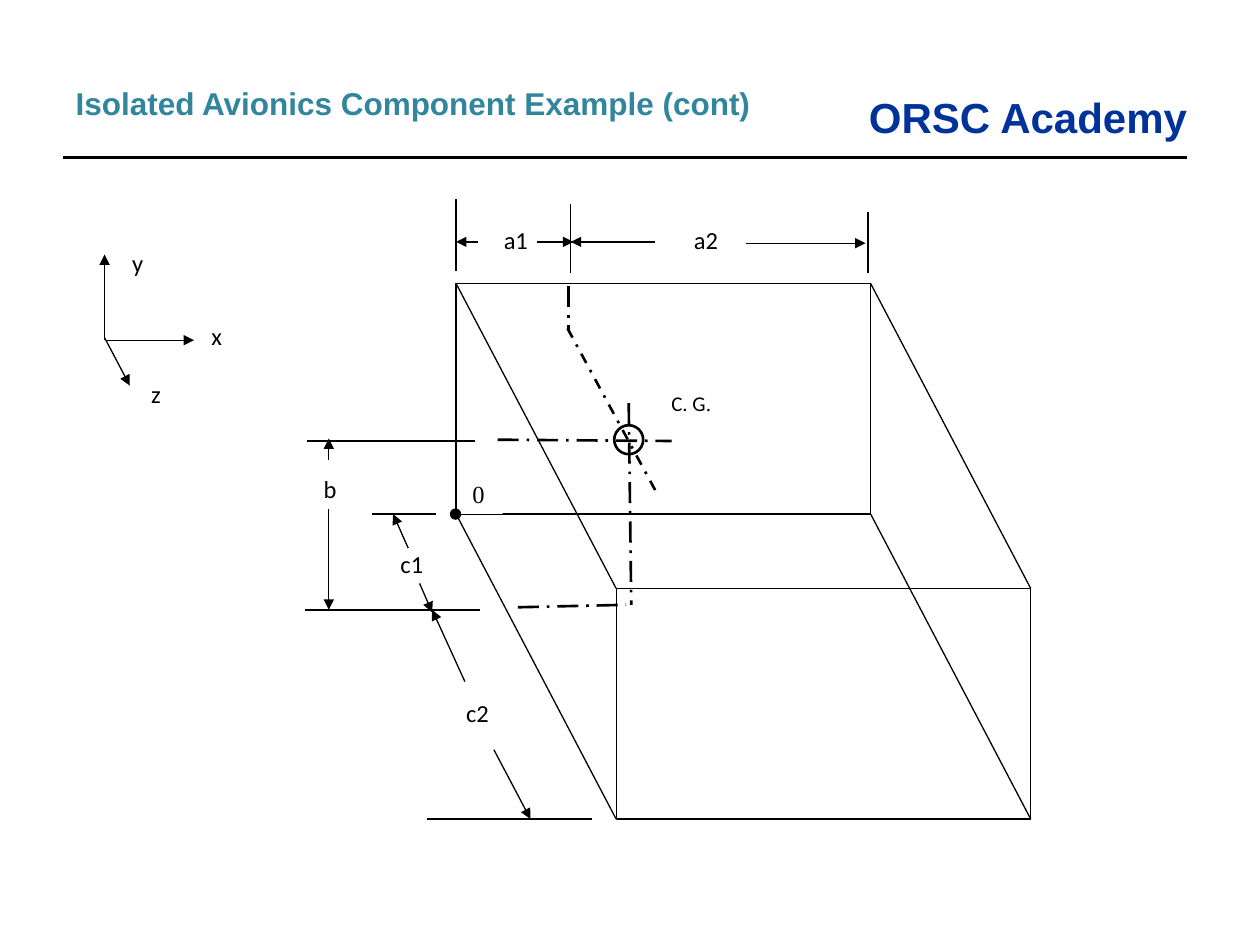
from dataclasses import dataclass
from typing import Any

from lxml.etree import SubElement
from pptx import Presentation
from pptx.dml.color import RGBColor
from pptx.enum.dml import MSO_LINE
from pptx.enum.shapes import MSO_CONNECTOR, MSO_SHAPE
from pptx.enum.text import MSO_ANCHOR, PP_ALIGN
from pptx.oxml.ns import qn
from pptx.util import Inches, Pt

COLORS = {"ink": "000000", "paper": "FFFFFF", "title": "31859C", "academy": "003399"}
COLUMNS, ROWS = 100, 75
CELL = Inches(10) // COLUMNS


def rgb(name):
    return RGBColor.from_string(COLORS[name])


def write(paragraph, text, color="ink", **font_format):
    run = paragraph.add_run()
    run.text = text
    for key, value in font_format.items():
        setattr(run.font, key, value)
    run.font.color.rgb = rgb(color)


@dataclass
class Region:
    """An area of the slide; its parts are placed in grid cells from its corner."""
    shapes: Any
    left: float
    top: float

    def place(self, x, y):
        return round((self.left + x) * CELL), round((self.top + y) * CELL)

    def line(self, start, end, width=0.75, dash=None, arrow=None):
        """Draw a line; arrow is None, "headEnd" (at start) or "tailEnd" (at end)."""
        connector = self.shapes.add_connector(
            MSO_CONNECTOR.STRAIGHT, *self.place(*start), *self.place(*end))
        connector.line.color.rgb = rgb("ink")
        connector.line.width = Pt(width)
        if dash:
            connector.line.dash_style = dash
        properties = connector._element.spPr
        if arrow:
            SubElement(properties.find(qn("a:ln")), qn(f"a:{arrow}"), type="triangle")
        SubElement(properties, qn("a:effectLst"))

    def shape(self, kind, x, y, width, height, fill=None, outline=None):
        shape = self.shapes.add_shape(
            kind, *self.place(x, y), round(width * CELL), round(height * CELL))
        shape.shadow.inherit = False
        if fill:
            shape.fill.solid()
            shape.fill.fore_color.rgb = rgb(fill)
        else:
            shape.fill.background()
        if outline:
            shape.line.color.rgb = rgb("ink")
            shape.line.width = Pt(outline)
        else:
            shape.line.fill.background()
        return shape

    def label(self, text, x, y, width, height, font="Calibri", size=14):
        frame = self.shape(MSO_SHAPE.RECTANGLE, x, y, width, height, "paper").text_frame
        frame.word_wrap = True
        frame.vertical_anchor = MSO_ANCHOR.TOP
        paragraph = frame.paragraphs[0]
        paragraph.alignment = PP_ALIGN.LEFT
        paragraph.space_after = Pt(10)
        write(paragraph, text, name=font, size=Pt(size))
        return paragraph


def add_header(slide, header):
    title = slide.shapes.title
    title.left, title.top = header.place(0, 0)
    title.width, title.height = round(57.5 * CELL), 4 * CELL
    academy = slide.shapes.add_textbox(*header.place(58.2, 0.6), 32 * CELL, 5 * CELL)
    texts = (
        (title, "Isolated Avionics Component Example (cont)", "title", 18, PP_ALIGN.LEFT),
        (academy, "ORSC Academy", "academy", 24, PP_ALIGN.RIGHT),
    )
    for box, text, color, size, alignment in texts:
        frame = box.text_frame
        frame.word_wrap = True
        frame.vertical_anchor = MSO_ANCHOR.MIDDLE
        paragraph = frame.paragraphs[0]
        paragraph.alignment = alignment
        write(paragraph, text, color, name="Arial", size=Pt(size), bold=True)
    header.line((0, 6.3), (89.2, 6.3), width=2.25)


def add_component_box(box, width=32.9, height=18.3, depth=(12.7, 24.2)):
    """Draw the wire-frame box: two faces joined at their corners along depth."""
    for x, y in ((0, 0), depth):
        box.shape(MSO_SHAPE.RECTANGLE, x, y, width, height, outline=0.75)
    for x in (0, width):
        for y in (0, height):
            box.line((x, y), (x + depth[0], y + depth[1]))


def add_center_of_gravity(center):
    center.shape(MSO_SHAPE.OVAL, -1.15, -1.15, 2.3, 2.3, "paper", 1.5)
    long_dash, dash = MSO_LINE.LONG_DASH_DOT, MSO_LINE.DASH_DOT
    for start, end, style in (
        ((0, -2.9), (0.2, 13.1), long_dash),
        ((-10.4, 0), (3.4, 0.1), long_dash),
        ((2.1, 4), (-5, -9.1), dash),
        ((-8.8, 13.3), (-0.2, 13.1), long_dash),
        ((-4.8, -12.2), (-4.8, -8.7), long_dash),
    ):
        center.line(start, end, 1.5, style)
    caption = center.label("C. G", 2.4, -4.4, 7.4, 3.3, size=12)
    write(caption, ".", name="Times New Roman", size=Pt(12))


def add_dimensions(area):
    """Add the origin, extension lines, dimension labels and dimension arrows."""
    area.label("0", 12.5, 22.5, 3.4, 3.3, "Times New Roman")
    area.shape(MSO_SHAPE.OVAL, 11.75, 25.4, 0.8, 0.8, "ink", 0.75)
    for x, top, bottom in ((12.2, 0.8, 6.5), (21.3, 1.2, 6.7), (44.9, 1.8, 6.7)):
        area.line((x, top), (x, bottom))
    for y, left, right, width in (
        (20, 0.4, 13.7, 0.75), (25.8, 5.5, 10.6, 0.75),
        (33.4, 0.2, 14.1, 1), (50, 9.9, 23, 1),
    ):
        area.line((left, y), (right, y), width)
    for text, x, y, width in (
        ("b", 0.7, 22.1, 4), ("c1", 6.8, 28.1, 4), ("c2", 12, 39.9, 6.1),
        ("a1", 15, 2.4, 4), ("a2", 30.1, 2.4, 6.7),
    ):
        area.label(text, x, y, width, 3.8)
    for tail, tip in (
        ((2.1, 21.5), (2.1, 19.8)), ((2.1, 25.4), (2.1, 33.4)),
        ((13.9, 4.2), (12.2, 4.2)), ((18.6, 4.2), (21.5, 4.2)),
        ((28, 4.2), (21.3, 4.2)), ((35.2, 4.3), (44.7, 4.3)),
        ((8.4, 28.5), (7.2, 25.8)), ((9.3, 31.3), (10.3, 33.6)),
        ((12.9, 39.1), (10.3, 33.4)), ((15.2, 44.5), (18.1, 50)),
    ):
        area.line(tail, tip, arrow="tailEnd")


def add_axes(origin):
    for start, tip in (((0, 0), (0, -6.8)), ((0.2, 0), (7.1, 0)), ((0, -0.2), (2, 3.6))):
        origin.line(start, tip, arrow="tailEnd")
    for text, x, y, width, height in (
        ("x", 7.5, -2, 3.6, 3), ("z", 2.7, 2.6, 3.2, 3.4), ("y", 1.2, -7.8, 3.8, 3.6),
    ):
        origin.label(text, x, y, width, height)


def main():
    presentation = Presentation()
    presentation.slide_width = COLUMNS * CELL
    presentation.slide_height = ROWS * CELL
    slide = presentation.slides.add_slide(presentation.slide_layouts[5])
    shapes = slide.shapes
    add_header(slide, Region(shapes, 5, 6.2))
    add_component_box(Region(shapes, 36.2, 22.5))
    add_dimensions(Region(shapes, 24, 15))
    add_center_of_gravity(Region(shapes, 49.9, 34.9))
    add_axes(Region(shapes, 8.3, 27))
    presentation.save("out.pptx")


if __name__ == "__main__":
    main()
